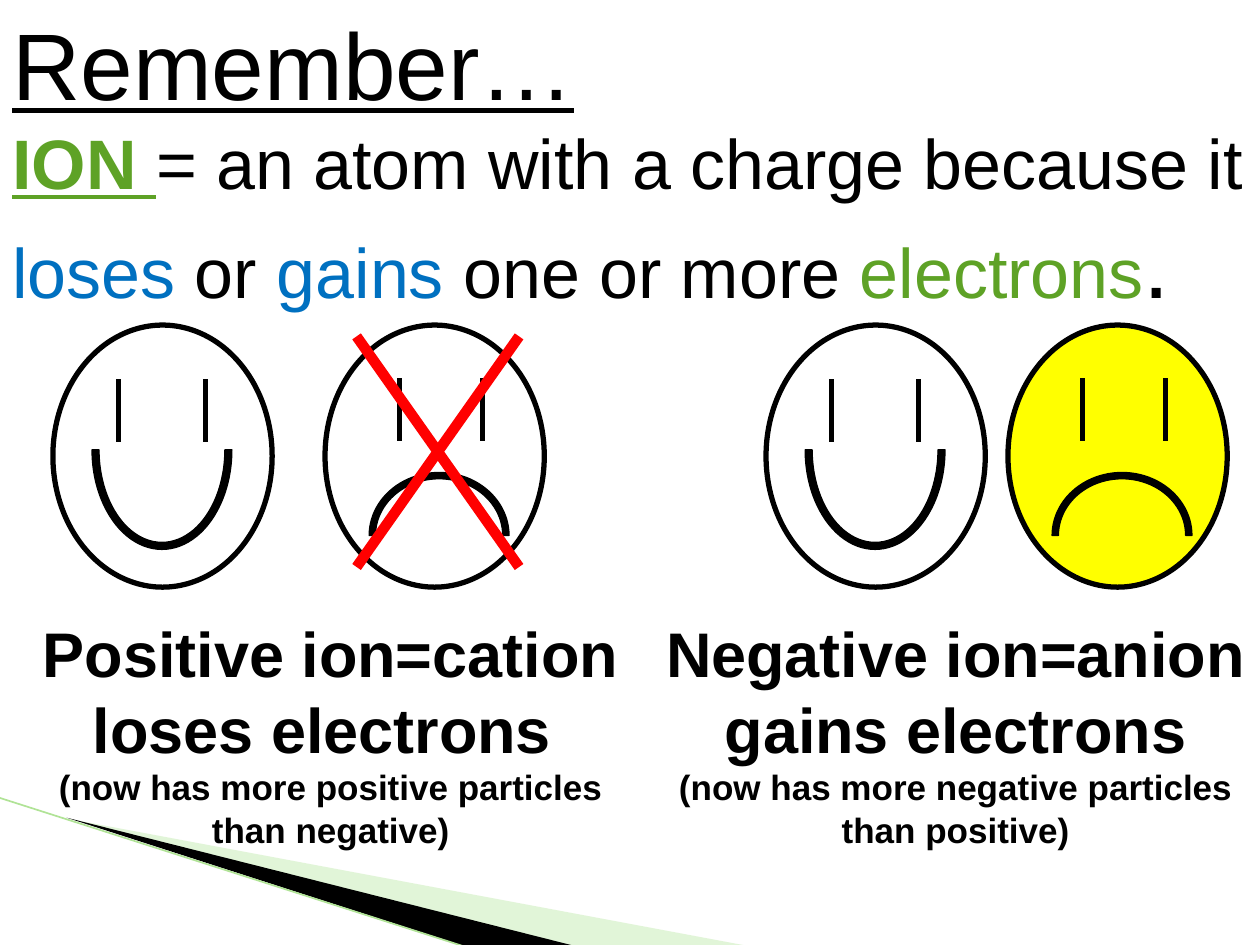
from lxml.etree import SubElement
from pptx import Presentation
from pptx.dml.color import RGBColor
from pptx.enum.shapes import MSO_CONNECTOR, MSO_SHAPE
from pptx.enum.text import PP_ALIGN
from pptx.oxml.ns import qn
from pptx.util import Inches, Pt

COLORS = {
    "black": "000000", "white": "FFFFFF", "yellow": "FFFF00", "red": "FF0000",
    "blue": "0070C0", "green": "5EA226", "pale": "B6E69E", "edge": "B0E396",
}
# Eye and mouth places, measured from the corner of the face
MOODS = {
    "happy": {"eyes": (0.52, 1.21), "top": 0.43, "mouth": (0.31, 0.2, 1.11, 1.58), "turn": 180},
    "sad": {"eyes": (0.59, 1.25), "top": 0.42, "mouth": (0.35, 1.17, 1.11, 1), "turn": 0},
}


def color(name):
    return RGBColor.from_string(COLORS[name])


def paint(shape, fill, line=None, width=0.75):
    shape.shadow.inherit = False
    shape.fill.solid()
    shape.fill.fore_color.rgb = color(fill)
    if line:
        shape.line.color.rgb = color(line)
        shape.line.width = Pt(width)
    else:
        shape.line.fill.background()


def add_line(shapes, start, end, tint, width):
    line = shapes.add_connector(MSO_CONNECTOR.STRAIGHT, *map(Inches, start + end))
    line.line.color.rgb = color(tint)
    line.line.width = Pt(width)
    SubElement(line._element.spPr, qn("a:effectLst"))


def add_wedge(shapes, points, fill, alpha=100):
    spots = [(Inches(x), Inches(y)) for x, y in points]
    pen = shapes.build_freeform(*spots[0])
    pen.add_line_segments(spots[1:], close=True)
    wedge = pen.convert_to_shape()
    paint(wedge, fill)
    if alpha < 100:
        tint = wedge._element.spPr.find(".//" + qn("a:srgbClr"))
        SubElement(tint, qn("a:alpha"), val=str(alpha * 1000))


def add_decor(shapes):
    add_wedge(shapes, [(0.55, 6.5), (5.95, 7.51), (4.56, 7.51)], "pale", 40)
    add_wedge(shapes, [(0.53, 6.49), (4.57, 7.51), (3.72, 7.52)], "black")
    add_line(shapes, (-0.01, 6.33), (3.71, 7.52), "edge", 0.95)


def add_text(shapes, box, paras, align=PP_ALIGN.LEFT):
    """Each paragraph is a list of (text, font format) runs."""
    frame = shapes.add_textbox(*map(Inches, box)).text_frame
    frame.word_wrap = True
    for i, runs in enumerate(paras):
        para = frame.paragraphs[0] if i == 0 else frame.add_paragraph()
        para.alignment = align
        for text, form in runs:
            run = para.add_run()
            run.text = text
            form = {"name": "Arial", "tint": "black", **form}
            run.font.color.rgb = color(form.pop("tint"))
            for key, value in form.items():
                setattr(run.font, key, value)


def add_intro(shapes, box):
    body = {"size": Pt(40)}
    blue, green = {**body, "tint": "blue"}, {**body, "tint": "green"}
    add_text(shapes, box, [
        [("Remember…", {"size": Pt(54), "underline": True})],
        [("ION ", {**green, "bold": True, "underline": True}),
         ("= an atom with a charge because it ", body),
         ("loses", blue), (" or ", body), ("gains", blue),
         (" one or more ", body), ("electrons", green), (".", {"size": Pt(54)})],
    ])


def add_face(shapes, left, top, mood, fill="white"):
    group = shapes.add_group_shape().shapes
    look = MOODS[mood]
    head = group.add_shape(MSO_SHAPE.OVAL, *map(Inches, (left, top, 1.74, 2.08)))
    paint(head, fill, "black", 3)
    for eye in look["eyes"]:
        x, y = left + eye, top + look["top"]
        add_line(group, (x, y), (x, y + 0.5), "black", 3)
    x, y, wide, high = look["mouth"]
    mouth = group.add_shape(MSO_SHAPE.BLOCK_ARC, *map(Inches, (left + x, top + y, wide, high)))
    mouth.adjustments[2] = 0.05
    mouth.rotation = look["turn"]
    paint(mouth, "black", "black")


def add_cross(shapes, left, top, wide, high):
    group = shapes.add_group_shape().shapes
    right, base = left + wide, top + high
    add_line(group, (right, top), (left, base), "red", 6)
    add_line(group, (left, top), (right, base), "red", 6)


def add_label(shapes, box, name, deed, note):
    rows = [(name, 36), (deed, 36), (note, 20)]
    paras = [[(text, {"size": Pt(size), "bold": True})] for text, size in rows]
    add_text(shapes, box, paras, PP_ALIGN.CENTER)


def main():
    deck = Presentation()
    deck.slide_width, deck.slide_height = Inches(10), Inches(7.5)
    shapes = deck.slides.add_slide(deck.slide_layouts[6]).shapes

    add_decor(shapes)
    add_intro(shapes, (0, 0, 10, 2.59))

    # Faces: cation pair, then anion pair
    for left, mood, fill in [(0.42, "happy", "white"), (2.58, "sad", "white"),
                             (6.08, "happy", "white"), (8, "sad", "yellow")]:
        add_face(shapes, left, 2.58, mood, fill)
    add_cross(shapes, 2.83, 2.67, 1.29, 1.83)

    # Labels
    add_label(shapes, (0.17, 4.83, 4.91, 1.99), "Positive ion=cation", "loses electrons ",
              "(now has more positive particles than negative)")
    add_label(shapes, (5.17, 4.83, 4.83, 1.99), "Negative ion=anion ", "gains electrons",
              "(now has more negative particles than positive)")
    deck.save("out.pptx")


if __name__ == "__main__":
    main()
